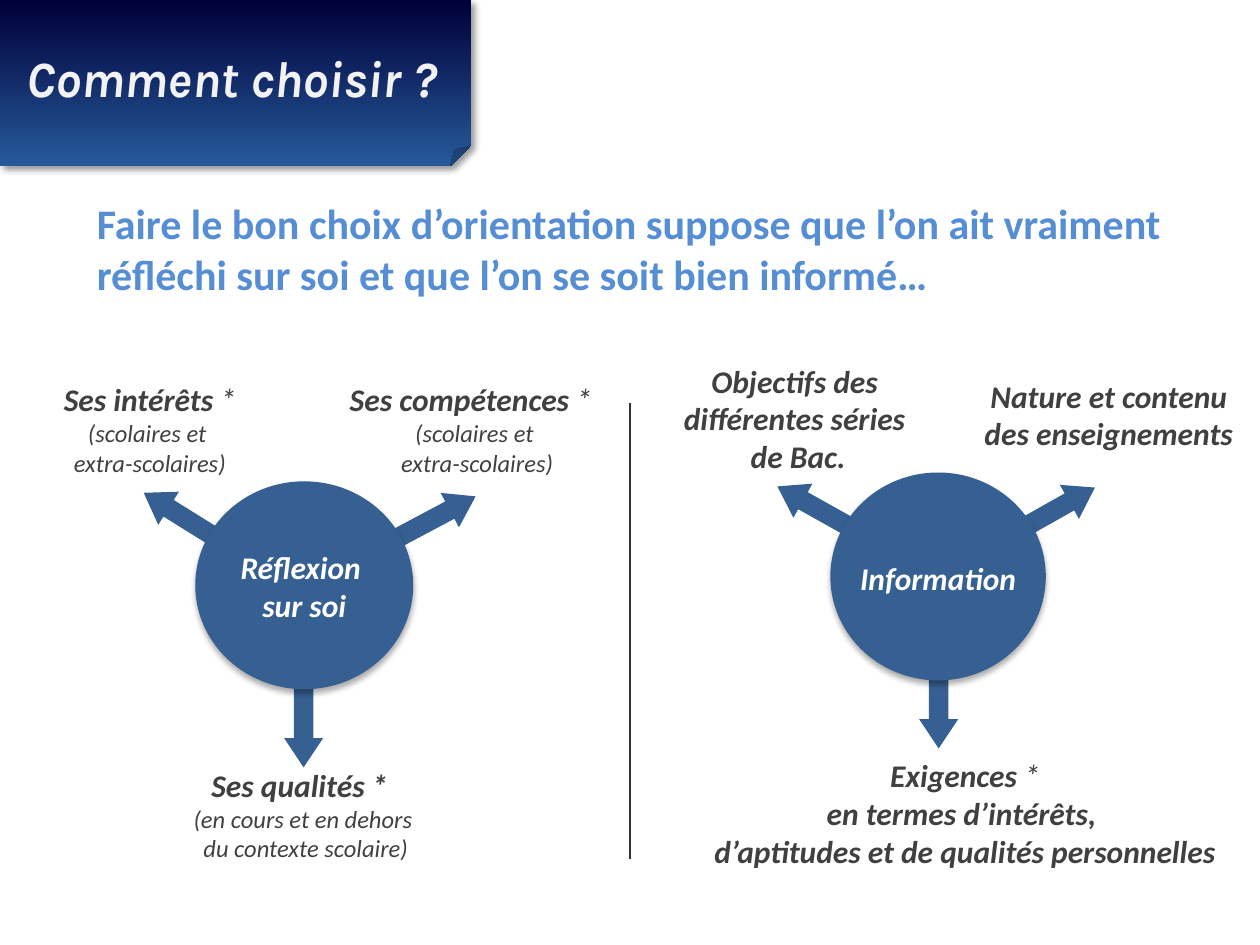
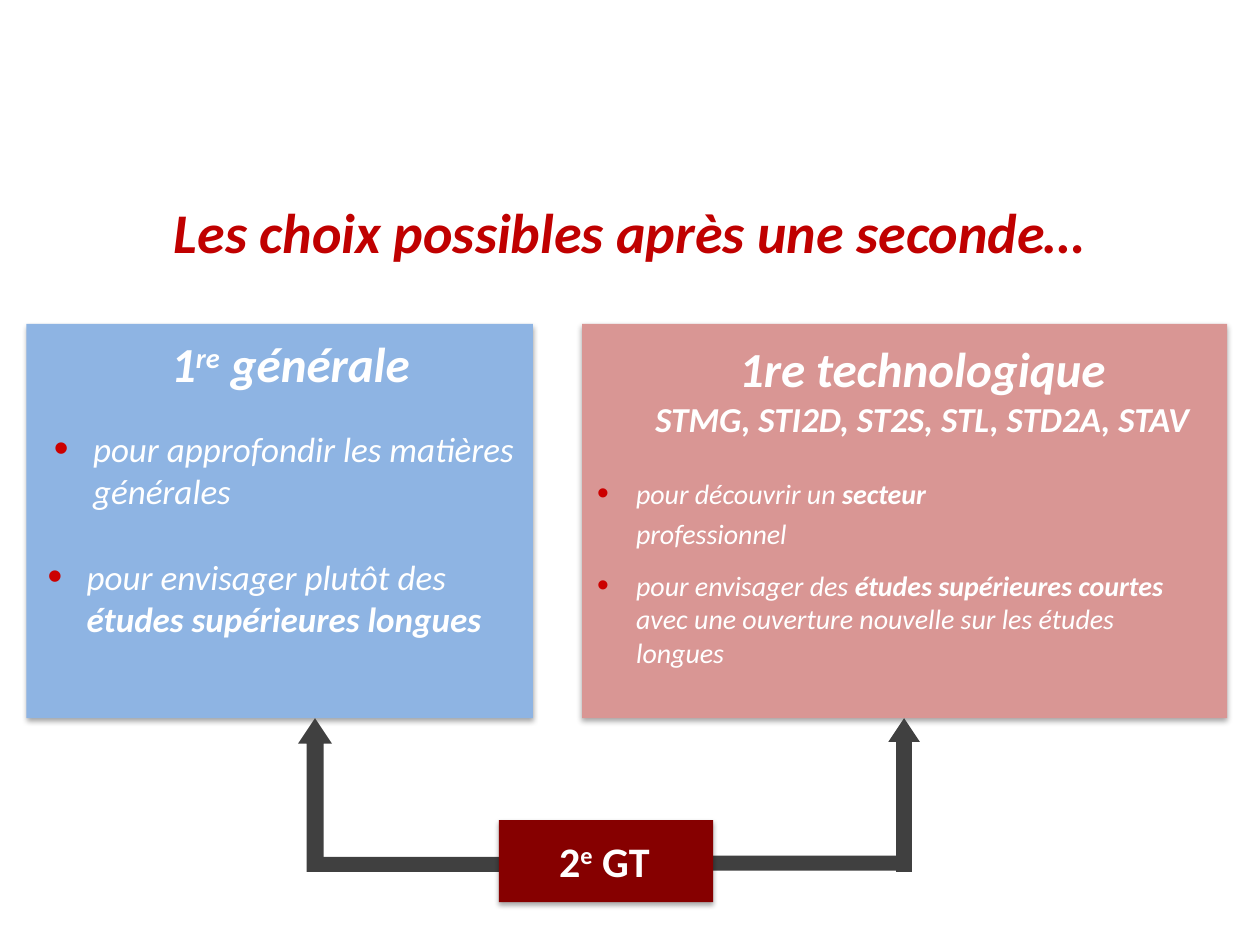
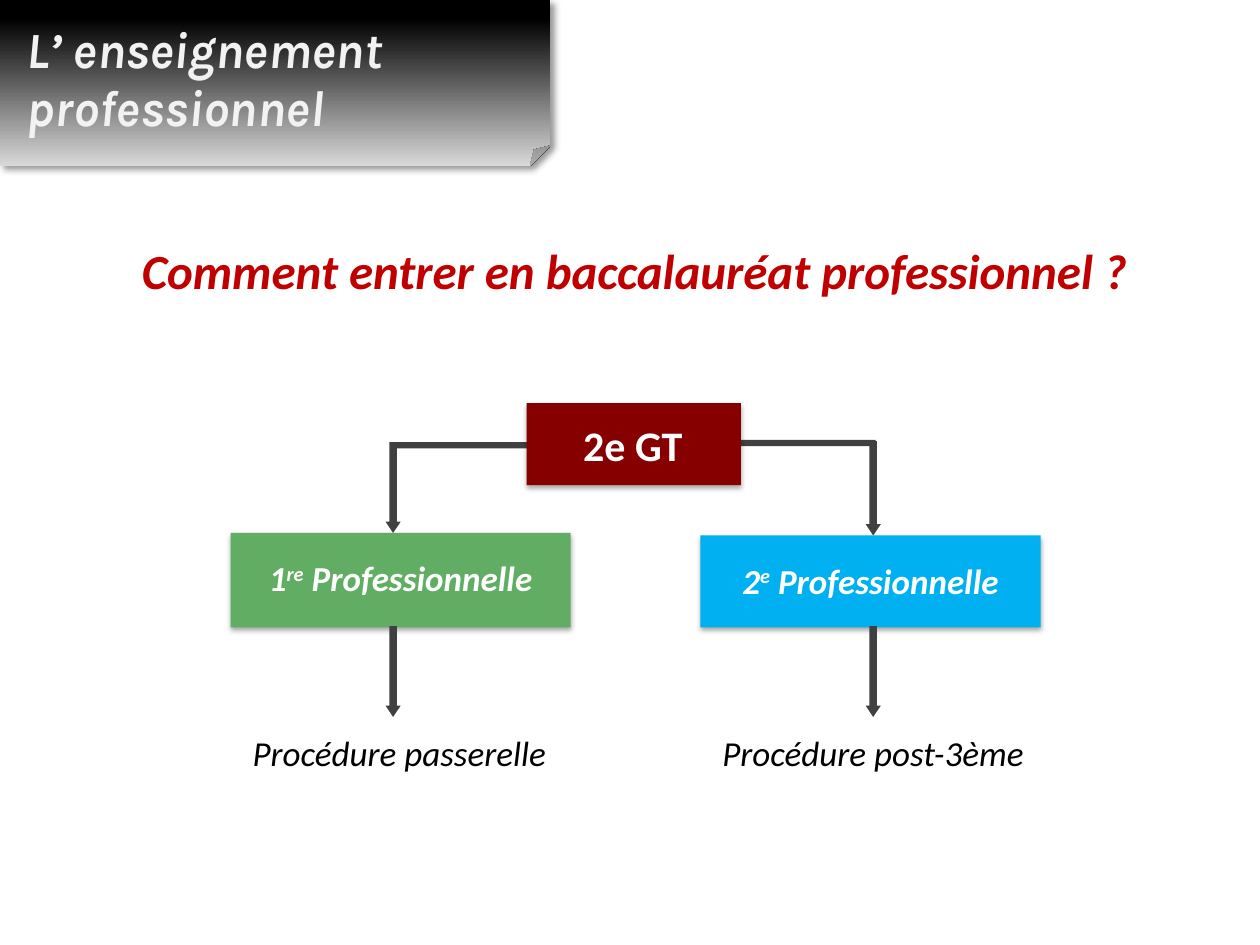
from copy import deepcopy
from dataclasses import dataclass

from lxml import etree
from pptx import Presentation
from pptx import util as u
from pptx.dml.color import RGBColor
from pptx.enum import shapes, text
from pptx.oxml import ns

SCALE = 9144  # EMU per px, 100 px to the inch

WHITE = RGBColor(0xFF, 0xFF, 0xFF)
BLACK = RGBColor(0x00, 0x00, 0x00)
PALE_GREY = RGBColor(0xF2, 0xF2, 0xF2)
LIGHT_GREY = RGBColor(0xD9, 0xD9, 0xD9)
DARK_GREY = RGBColor(0x40, 0x40, 0x40)
DIVIDER_GREY = RGBColor(0x33, 0x33, 0x33)
NIGHT_BLUE = RGBColor(0x00, 0x00, 0x3A)
BAND_BLUE = RGBColor(0x26, 0x5A, 0x9A)
HUB_BLUE = RGBColor(0x37, 0x60, 0x92)
INTRO_BLUE = RGBColor(0x55, 0x8E, 0xD5)
PANEL_BLUE = RGBColor(0x8E, 0xB4, 0xE3)
PANEL_ROSE = RGBColor(0xD9, 0x96, 0x94)
SKY_BLUE = RGBColor(0x00, 0xB0, 0xF0)
GREEN = RGBColor(0x61, 0xAD, 0x63)
RED = RGBColor(0xC0, 0x00, 0x00)
BULLET_RED = RGBColor(0xCC, 0x00, 0x00)
DARK_RED = RGBColor(0x86, 0x00, 0x00)

BODY_FONT, TITLE_FONT = "Calibri", "Karla"
SHAPE = shapes.MSO_SHAPE
LEFT, CENTER = text.PP_ALIGN.LEFT, text.PP_ALIGN.CENTER
HANGING = 31

# Shadows: opacity %, blur pt, distance pt, direction in degrees
BAND_SHADOW = (40, 4, 3, 45)
HUB_SHADOW = (32, 3.5, 2.2, 90)
BOX_SHADOW = (35, 3.1, 1.8, 90)


@dataclass
class Run:
    text: str
    size: int = 18
    bold: bool = True
    italic: bool = True
    raised: bool = False
    font: str = BODY_FONT


def px(value):
    return u.Emu(round(value * SCALE))


def place(box):
    return [px(value) for value in box]


def shift(box, left, top, width, height):
    """Turn a box relative to another box into a slide box."""
    return box[0] + left, box[1] + top, width, height


# Basic parts

def add_shadow(shape, opacity, blur, distance, direction):
    effects = shape._element.spPr.find(ns.qn("a:effectLst"))
    shadow = etree.SubElement(
        effects, ns.qn("a:outerShdw"), blurRad=str(u.Pt(blur)),
        dist=str(u.Pt(distance)), dir=str(direction * 60000), rotWithShape="0")
    colour = etree.SubElement(shadow, ns.qn("a:srgbClr"), val=str(BLACK))
    etree.SubElement(colour, ns.qn("a:alpha"), val=str(opacity * 1000))


def add_shape(slide, kind, box, colour=None, shadow=None):
    shape = slide.shapes.add_shape(kind, *place(box))
    shape.shadow.inherit = False
    shape.line.fill.background()
    if colour is not None:
        shape.fill.solid()
        shape.fill.fore_color.rgb = colour
    if shadow:
        add_shadow(shape, *shadow)
    return shape


def add_arrow(slide, center, length, thickness, rotation, colour):
    box = (center[0] - length / 2, center[1] - thickness / 2, length, thickness)
    arrow = add_shape(slide, SHAPE.LEFT_ARROW, box, colour)
    arrow.adjustments[0] = 0.5
    arrow.adjustments[1] = 0.75
    arrow.rotation = rotation


def add_run(paragraph, run, colour):
    for index, line in enumerate(run.text.split("\n")):
        if index:
            properties = deepcopy(paragraph.runs[-1]._r.rPr)
            paragraph.add_line_break()
            paragraph._p[-1].append(properties)
        if not line:
            continue
        piece = paragraph.add_run()
        piece.text = line
        font = piece.font
        font.name, font.size = run.font, u.Pt(run.size)
        font.bold, font.italic = run.bold, run.italic
        font.color.rgb = colour
        if run.raised:
            font._element.set("baseline", "30000")


def add_text(slide, box, paragraphs, colour, align=CENTER, wrap=True):
    textbox = slide.shapes.add_textbox(*place(box))
    frame = textbox.text_frame
    frame.word_wrap = wrap
    for index, runs in enumerate(paragraphs):
        paragraph = frame.paragraphs[0] if index == 0 else frame.add_paragraph()
        paragraph.alignment = align
        for run in runs:
            add_run(paragraph, run, colour)
    return frame


def add_bullet(paragraph):
    properties = paragraph._p.get_or_add_pPr()
    properties.set("marL", str(px(HANGING)))
    properties.set("indent", str(-px(HANGING)))
    bullet_colour = etree.SubElement(properties, ns.qn("a:buClr"))
    etree.SubElement(bullet_colour, ns.qn("a:srgbClr"), val=str(BULLET_RED))
    etree.SubElement(properties, ns.qn("a:buSzPct"), val="120000")
    etree.SubElement(properties, ns.qn("a:buFont"), typeface="Arial")
    etree.SubElement(properties, ns.qn("a:buChar"), char="•")


def add_bullet_text(slide, box, paragraphs):
    frame = add_text(slide, box, paragraphs, WHITE, LEFT)
    add_bullet(frame.paragraphs[0])
    for paragraph in frame.paragraphs[1:]:
        paragraph._p.get_or_add_pPr().set("marL", str(px(HANGING)))
        paragraph.space_before = u.Pt(4)


# Shared regions

def title_band(slide, width, title, title_width, top_colour, bottom_colour, start=0):
    box = (0, 0, width, 132)
    band = add_shape(slide, SHAPE.FOLDED_CORNER, box, shadow=BAND_SHADOW)
    # Size of the folded corner
    geometry = band._element.spPr.find(ns.qn("a:prstGeom"))
    for child in list(geometry):
        geometry.remove(child)
    guides = etree.SubElement(geometry, ns.qn("a:avLst"))
    etree.SubElement(guides, ns.qn("a:gd"), name="adj", fmla="val 12500")
    band.fill.gradient()
    band.fill.gradient_angle = 270
    first, last = band.fill.gradient_stops
    first.color.rgb, first.position = top_colour, start
    last.color.rgb, last.position = bottom_colour, 1
    frame = add_text(slide, shift(box, 21, 17, title_width, 93),
                     [[Run(title, 29, font=TITLE_FONT)]], PALE_GREY, LEFT)
    frame.margin_left = frame.margin_right = frame.margin_top = frame.margin_bottom = 0
    frame.vertical_anchor = text.MSO_ANCHOR.MIDDLE
    frame.paragraphs[0].line_spacing = 0.95


def start_badge(slide, box, label_box, runs):
    add_shape(slide, SHAPE.RECTANGLE, box, DARK_RED, BOX_SHADOW)
    add_text(slide, shift(box, *label_box), [runs], WHITE, LEFT, wrap=False)


# Slide 1: how to choose

def hub(slide, box, name, name_box, arrows, labels):
    for left, top, rotation in arrows:
        add_arrow(slide, (box[0] + left, box[1] + top), 94, 31, rotation, HUB_BLUE)
    add_shape(slide, SHAPE.OVAL, box, HUB_BLUE, HUB_SHADOW)
    add_text(slide, shift(box, *name_box), [[Run(name)]], WHITE)
    for label_box, runs in labels:
        add_text(slide, shift(box, *label_box), [runs], DARK_GREY)


def detail(words):
    return Run(words, 14, bold=False)


def choosing_slide(slide):
    title_band(slide, 374, "Comment choisir ?", 329, NIGHT_BLUE, BAND_BLUE)
    add_text(slide, (67, 152, 866, 91), [[Run(
        "Faire le bon choix d’orientation suppose que l’on ait vraiment "
        "réfléchi sur soi et que l’on se soit bien informé…",
        24, italic=False)]], INTRO_BLUE, LEFT)

    # Divider between the two hubs
    divider = slide.shapes.add_connector(
        shapes.MSO_CONNECTOR.STRAIGHT, px(500), px(320), px(500), px(682))
    divider.line.color.rgb = DIVIDER_GREY
    divider.line.width = u.Pt(1)
    etree.SubElement(divider._element.spPr, ns.qn("a:effectLst"))

    hub(slide, (155, 382, 173, 165), "Réflexion \nsur soi", (0, 48, 173, 71),
        [(86, 180, 270), (-1, 34, 31.9), (181, 34, 152)],
        [((-157, -85, 242, 88),
          [Run("Ses intérêts"), Run(" *\n", bold=False),
           detail("(scolaires et \nextra-scolaires)")]),
         ((102, -85, 239, 88),
          [Run("Ses compétences"), Run(" * \n", bold=False),
           detail("(scolaires et\n extra-scolaires)")]),
         ((-102, 221, 375, 88),
          [Run("Ses qualités * \n"),
           detail("(en cours et en dehors\n du contexte scolaire)")])])
    hub(slide, (659, 375, 171, 165), "Information", (1, 64, 169, 40),
        [(86, 172, 270), (-1, 34, 29.2), (169, 35, 150.6)],
        [((-162, -93, 273, 101),
          [Run("Objectifs des \ndifférentes séries \nde Bac.")]),
         ((108, -81, 226, 71), [Run("Nature et contenu des enseignements")]),
         ((-111, 220, 436, 101),
          [Run("Exigences "), Run("*\n", bold=False),
           Run("en termes d’intérêts, \nd’aptitudes et de qualités personnelles")])])


# Slide 2: choices after the seconde

def general_panel(slide, box):
    add_shape(slide, SHAPE.RECTANGLE, box, PANEL_BLUE, BOX_SHADOW)
    add_text(slide, shift(box, 105, 3, 215, 57),
             [[Run("1", 28), Run("re", 28, raised=True), Run(" générale", 28)]],
             WHITE, LEFT, wrap=False)
    add_bullet_text(slide, shift(box, 12, 77, 401, 77),
                    [[Run("pour approfondir les matières générales", 20, bold=False)]])
    add_bullet_text(slide, shift(box, 7, 179, 417, 77),
                    [[Run("pour envisager plutôt des ", 20, bold=False),
                      Run("études supérieures longues", 20)]])


def technological_panel(slide, box):
    add_shape(slide, SHAPE.RECTANGLE, box, PANEL_ROSE, BOX_SHADOW)
    add_text(slide, shift(box, 34, 7, 472, 94),
             [[Run("1re technologique", 28)],
              [Run("STMG, STI2D, ST2S, STL, STD2A, STAV", 20)]], WHITE)
    add_bullet_text(slide, shift(box, 2, 116, 370, 71),
                    [[Run("pour découvrir un ", 16, bold=False), Run("secteur", 16)],
                     [Run("professionnel", 16, bold=False)]])
    add_bullet_text(slide, shift(box, 2, 189, 489, 90),
                    [[Run("pour envisager des ", 16, bold=False),
                      Run("études supérieures courtes ", 16),
                      Run("avec une ouverture nouvelle sur les études longues",
                          16, bold=False)]])


def after_seconde_slide(slide):
    add_text(slide, (67, 152, 866, 64),
             [[Run("Les choix possibles après une seconde…", 32)]], RED)
    general_panel(slide, (21, 257, 402, 313))
    technological_panel(slide, (462, 257, 512, 313))

    # Elbow arrows from the badge up to the panels
    for center_x, thickness, bar in ((250, 27, (244, 680, 166, 12)),
                                     (717.5, 25, (565, 679, 152, 12))):
        add_arrow(slide, (center_x, 631), 122, thickness, 90, DARK_GREY)
        add_shape(slide, SHAPE.RECTANGLE, bar, DARK_GREY)
    start_badge(slide, (396, 651, 170, 65), (38, 7, 94, 50),
                [Run("2", 24, italic=False), Run("e", 24, italic=False, raised=True),
                 Run(" GT", 24, italic=False)])


# Slide 3: vocational route

def route(slide, box, colour, number, ordinal, arrow_x, drop, bar, procedure, procedure_box):
    left, top, width, height = box
    add_shape(slide, SHAPE.RECTANGLE, box, colour, BOX_SHADOW)
    add_text(slide, shift(box, 0, 14, width, 44),
             [[Run(number, 20), Run(ordinal, 20, raised=True),
               Run(" Professionnelle", 20)]], WHITE)
    # Arrow in from the badge, arrow out to the procedure
    add_shape(slide, SHAPE.RECTANGLE, shift(box, *bar), DARK_GREY)
    for center_y, length in ((top - drop / 2, drop), (top + height + 35, 72)):
        add_arrow(slide, (left + arrow_x, center_y), length, 12, 270, DARK_GREY)
    add_text(slide, shift(box, *procedure_box),
             [[Run(procedure, 20, bold=False)]], BLACK)


def vocational_slide(slide):
    title_band(slide, 437, "L’ enseignement professionnel", 408,
               BLACK, LIGHT_GREY, start=0.11)
    add_text(slide, (26, 186, 955, 52),
             [[Run("Comment entrer en baccalauréat professionnel ?", 28)]], RED)
    route(slide, (183, 423, 270, 75), GREEN, "1", "re", 129, 72,
          (129, -72, 120, 5), "Procédure passerelle", (-30, 153, 328, 44))
    route(slide, (556, 425, 270, 73), SKY_BLUE, "2", "e", 137, 75,
          (31, -76, 108, 5), "Procédure post-3ème", (5, 151, 264, 77))
    start_badge(slide, (418, 320, 170, 65), (35, 8, 100, 50),
                [Run("2e GT", 24, italic=False)])


def main():
    presentation = Presentation()
    presentation.slide_width, presentation.slide_height = px(1000), px(750)
    blank = presentation.slide_layouts[6]
    for build in (choosing_slide, after_seconde_slide, vocational_slide):
        build(presentation.slides.add_slide(blank))
    presentation.save("out.pptx")


if __name__ == "__main__":
    main()
